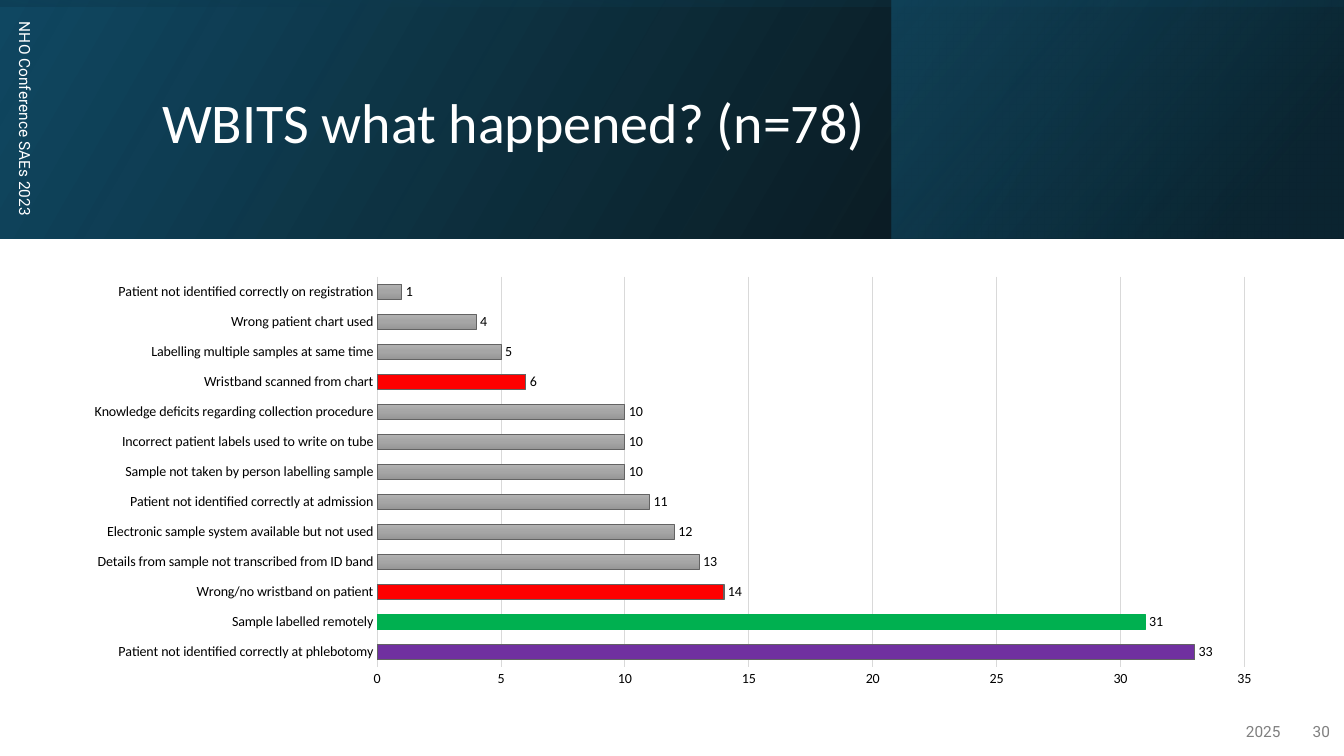
from pptx import Presentation, util as u
from pptx.chart.data import CategoryChartData
from pptx.dml.color import RGBColor
from pptx.enum import chart as charts, shapes, text
from pptx.oxml import parse_xml
from pptx.oxml.ns import nsdecls, qn

WIDTH, HEIGHT = 13.33, 7.5
BAND = 2.37
WHITE = RGBColor(0xFF, 0xFF, 0xFF)
BLACK = RGBColor(0, 0, 0)
FOOTER_GREY = RGBColor(0x80, 0x80, 0x80)
GRID_GREY = RGBColor(0xD9, 0xD9, 0xD9)
BAR_EDGE = RGBColor(0x63, 0x63, 0x63)
PURPLE = RGBColor(0x70, 0x30, 0xA0)
GREEN = RGBColor(0x00, 0xB0, 0x50)
RED = RGBColor(0xFF, 0, 0)
NIGHT = BLACK
PETROL = RGBColor(0x10, 0x48, 0x62)
DEEP_TEAL = RGBColor(0x0B, 0x30, 0x41)
TEAL = RGBColor(0x15, 0x60, 0x82)
BAR_STOPS = [(0, RGBColor(0xB1, 0xB1, 0xB1), 100),
             (50, RGBColor(0xA5, 0xA5, 0xA5), 100),
             (100, RGBColor(0x97, 0x97, 0x97), 100)]

CAUSES = [
    ("Patient not identified correctly at phlebotomy", 33, PURPLE),
    ("Sample labelled remotely", 31, GREEN),
    ("Wrong/no wristband on patient", 14, RED),
    ("Details from sample not transcribed from ID band", 13, None),
    ("Electronic sample system available but not used", 12, None),
    ("Patient not identified correctly at admission", 11, None),
    ("Sample not taken by person labelling sample", 10, None),
    ("Incorrect patient labels used to write on tube", 10, None),
    ("Knowledge deficits regarding collection procedure", 10, None),
    ("Wristband scanned from chart", 6, RED),
    ("Labelling multiple samples at same time", 5, None),
    ("Wrong patient chart used", 4, None),
    ("Patient not identified correctly on registration", 1, None),
]


def inches(box):
    return [u.Inches(length) for length in box]


def blend(properties, fill, stops, angle):
    fill.solid()
    marks = "".join(
        f'<a:gs pos="{at * 1000}"><a:srgbClr val="{color}">'
        f'<a:alpha val="{opacity * 1000}"/></a:srgbClr></a:gs>'
        for at, color, opacity in stops)
    gradient = parse_xml(
        f'<a:gradFill {nsdecls("a")} rotWithShape="1"><a:gsLst>{marks}</a:gsLst>'
        f'<a:lin ang="{angle * 60000}" scaled="0"/></a:gradFill>')
    properties.replace(properties.find(qn("a:solidFill")), gradient)


def add_panel(slide, box, stops, angle, rotation=0):
    panel = slide.shapes.add_shape(shapes.MSO_SHAPE.RECTANGLE, *inches(box))
    panel.shadow.inherit = False
    panel.line.fill.background()
    panel.rotation = rotation
    properties = panel._element.spPr
    properties.find(qn("a:xfrm")).set("flipH", "1")
    blend(properties, panel.fill, stops, angle)


def add_words(slide, box, words, size, color, font="Roboto", rotation=0,
              align=text.PP_ALIGN.LEFT, after=6, spacing=1.0):
    holder = slide.shapes.add_textbox(*inches(box))
    holder.rotation = rotation
    frame = holder.text_frame
    frame.word_wrap = True
    frame.vertical_anchor = text.MSO_ANCHOR.MIDDLE
    line = frame.paragraphs[0]
    line.alignment = align
    line.space_after = u.Pt(after)
    line.line_spacing = spacing
    run = line.add_run()
    run.text = words
    run.font.name = font
    run.font.size = u.Pt(size)
    run.font.color.rgb = color


def add_header(slide, box):
    left, top, width, height = box
    side = 8.84
    add_panel(slide, box, [(0, NIGHT, 96), (100, PETROL, 100)], 330)
    add_panel(slide, (left + side, top, width - side, height),
              [(19, DEEP_TEAL, 68), (100, TEAL, 48)], 320)
    shift = (width - height) / 2
    add_panel(slide, (left + shift, top - shift, height, width),
              [(23, PETROL, 16), (99, NIGHT, 45)], 350, rotation=270)
    add_words(slide, (left + 1.51, top + 0.38, 10.63, 1.72),
              "WBITS what happened? (n=78)", 40, WHITE, font="Calibri",
              after=0, spacing=0.9)
    add_words(slide, (left - 2, top + 2.17, 4.5, 0.4),
              "NHO Conference SAEs 2023", 11, WHITE, rotation=90)


def add_causes_chart(slide, box):
    data = CategoryChartData()
    data.categories = [cause for cause, _, _ in CAUSES]
    data.add_series("Series 1", [count for _, count, _ in CAUSES])
    causes = slide.shapes.add_chart(
        charts.XL_CHART_TYPE.BAR_CLUSTERED, *inches(box), data).chart
    causes.has_legend = False
    causes.has_title = False
    causes.font.name = "Calibri"
    causes.font.size = u.Pt(10)
    causes.font.color.rgb = BLACK

    for axis in (causes.category_axis, causes.value_axis):
        axis.major_tick_mark = charts.XL_TICK_MARK.NONE
        axis.minor_tick_mark = charts.XL_TICK_MARK.NONE
    causes.category_axis.format.line.color.rgb = GRID_GREY
    causes.category_axis.format.line.width = u.Pt(0.75)
    counts = causes.value_axis
    counts.minimum_scale, counts.maximum_scale, counts.major_unit = 0, 35, 5
    counts.format.line.fill.background()
    counts.has_major_gridlines = True
    counts.major_gridlines.format.line.color.rgb = GRID_GREY
    counts.major_gridlines.format.line.width = u.Pt(0.75)

    plot = causes.plots[0]
    plot.gap_width = 100
    plot.vary_by_categories = False
    plot.has_data_labels = True
    plot.data_labels.show_value = True
    plot.data_labels.position = charts.XL_LABEL_POSITION.OUTSIDE_END

    bars = plot.series[0]
    bars.invert_if_negative = False
    blend(bars._element.get_or_add_spPr(), bars.format.fill, BAR_STOPS, 90)
    bars.format.line.color.rgb = BAR_EDGE
    bars.format.line.width = u.Pt(0.75)
    for index, (_, _, highlight) in enumerate(CAUSES):
        if highlight is None:
            continue
        bar = bars.points[index].format
        bar.fill.solid()
        bar.fill.fore_color.rgb = highlight
        bar.line.color.rgb = GREEN if highlight == GREEN else BAR_EDGE
        bar.line.width = u.Pt(0.75)


def add_footer(slide, box):
    left, top, width, height = box
    number = 0.49
    for words, start, span in (("2025", left, width - number),
                               ("30", left + width - number, number)):
        add_words(slide, (start, top, span, height), words, 11, FOOTER_GREY,
                  align=text.PP_ALIGN.RIGHT)


def main():
    deck = Presentation()
    deck.slide_width, deck.slide_height = inches((WIDTH, HEIGHT))
    slide = deck.slides.add_slide(deck.slide_layouts[6])
    add_header(slide, (0, 0, WIDTH, BAND))
    add_causes_chart(slide, (0.7, 2.66, 11.95, 4.24))
    add_footer(slide, (9.81, 7.06, 3.48, 0.4))
    deck.save("out.pptx")


if __name__ == "__main__":
    main()
